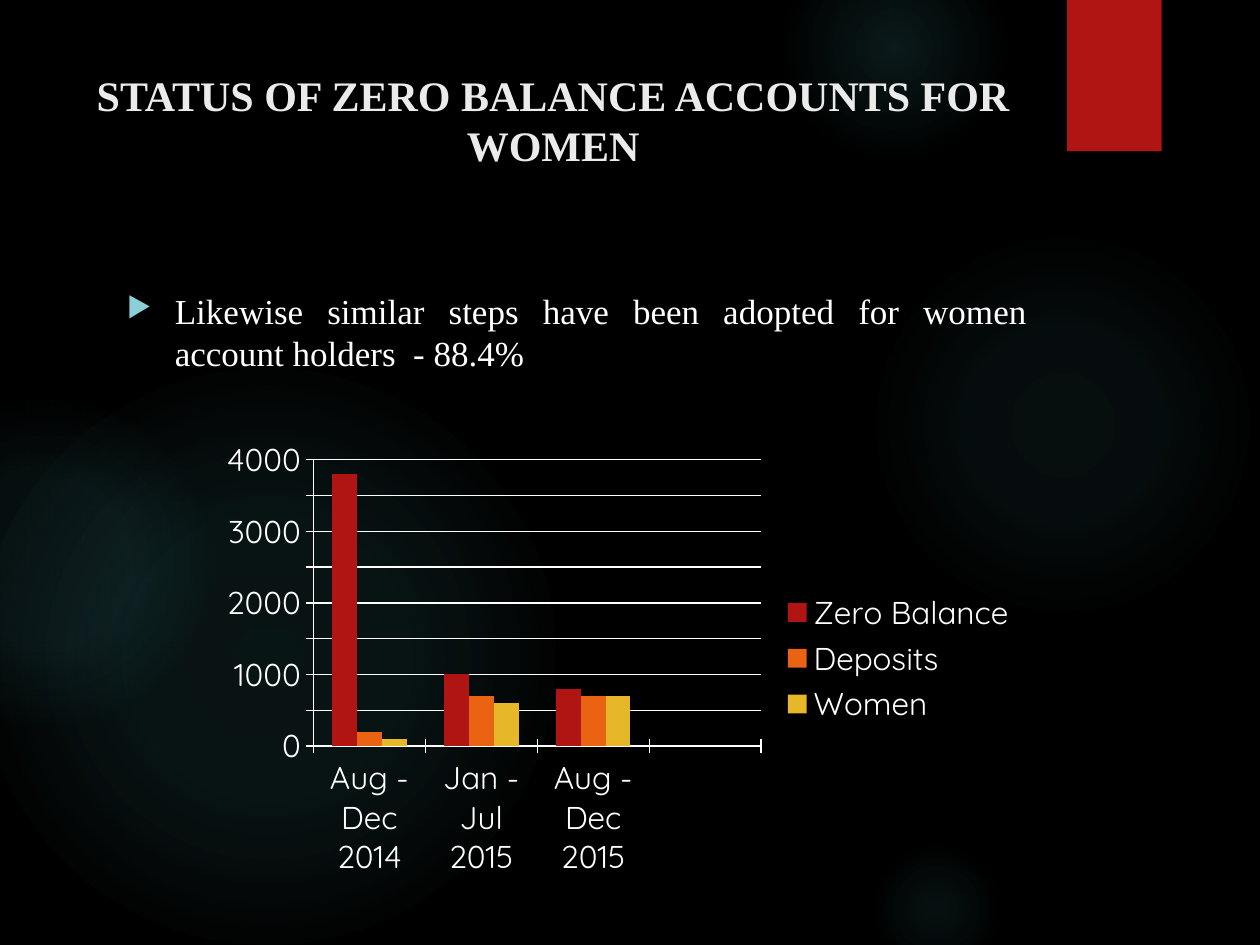
import pptx
import pptx.chart.data
import pptx.dml.color
import pptx.enum.chart
import pptx.enum.shapes
import pptx.enum.text
import pptx.oxml
import pptx.oxml.ns
import pptx.util
from pptx.util import Inches

RGBColor = pptx.dml.color.RGBColor
BLACK = RGBColor(0x00, 0x00, 0x00)
WHITE = RGBColor(0xFF, 0xFF, 0xFF)
TITLE_GREY = RGBColor(0xEB, 0xEB, 0xEB)
GLOW = RGBColor(0x50, 0xB9, 0xC1)
BULLET = RGBColor(0x8A, 0xD0, 0xD6)
RED = RGBColor(0xB0, 0x15, 0x13)
ORANGE = RGBColor(0xEA, 0x63, 0x12)
YELLOW = RGBColor(0xE6, 0xB7, 0x29)
SERIF, SANS = "Times New Roman", "Quicksand"

# left, top, diameter, gradient stops as (position %, opacity %)
GLOWS = [
    (6.89, 1.83, 3.08, [(0, 7), (36, 6), (69, 0)]),
    (6.22, -0.5, 1.75, [(0, 14), (36, 7), (73, 0)]),
    (6.89, 6.67, 1.08, [(0, 9), (36, 5), (66, 0)]),
    (-0.17, 2.92, 4.58, [(0, 11), (36, 10), (75, 0)]),
    (-0.92, 3.17, 2.58, [(0, 8), (36, 8), (72, 0)]),
]
PERIODS = ["Aug - Dec 2014", "Jan - Jul 2015", "Aug - Dec 2015", ""]
SERIES = [
    ("Zero Balance", [3800, 1000, 800, None], RED),
    ("Deposits", [200, 700, 700, None], ORANGE),
    ("Women ", [100, 600, 700, None], YELLOW),
]


def add_plain_shape(slide, kind, left, top, width, height, color):
    shape = slide.shapes.add_shape(kind, left, top, width, height)
    shape.shadow.inherit = False
    shape.line.fill.background()
    shape.fill.solid()
    shape.fill.fore_color.rgb = color
    return shape


def add_glow(slide, left, top, diameter, stops):
    shape = add_plain_shape(slide, pptx.enum.shapes.MSO_SHAPE.OVAL,
                            left, top, diameter, diameter, GLOW)
    stop_xml = "".join(
        f'<a:gs pos="{position * 1000}"><a:srgbClr val="{GLOW}">'
        f'<a:alpha val="{opacity * 1000}"/></a:srgbClr></a:gs>'
        for position, opacity in stops)
    gradient = pptx.oxml.parse_xml(
        f'<a:gradFill {pptx.oxml.ns.nsdecls("a")} rotWithShape="1">'
        f'<a:gsLst>{stop_xml}</a:gsLst><a:path path="circle">'
        '<a:fillToRect l="50000" t="50000" r="50000" b="50000"/>'
        '</a:path></a:gradFill>')
    properties = shape.element.spPr
    solid = properties.find(pptx.oxml.ns.qn("a:solidFill"))
    properties.replace(solid, gradient)


def add_backdrop(slide):
    slide.background.fill.solid()
    slide.background.fill.fore_color.rgb = BLACK
    for left, top, diameter, stops in GLOWS:
        add_glow(slide, Inches(left), Inches(top), Inches(diameter), stops)
    # Red tab at the top edge
    add_plain_shape(slide, pptx.enum.shapes.MSO_SHAPE.RECTANGLE,
                    Inches(8.47), 0, Inches(0.75), Inches(1.2), RED)


def style_text(shape, text, size, color, alignment, bold=False):
    frame = shape.text_frame
    frame.word_wrap = True
    frame.auto_size = pptx.enum.text.MSO_AUTO_SIZE.NONE
    frame.vertical_anchor = pptx.enum.text.MSO_ANCHOR.TOP
    frame.text = text
    paragraph = frame.paragraphs[0]
    paragraph.alignment = alignment
    font = paragraph.runs[0].font
    font.name, font.size, font.bold = SERIF, pptx.util.Pt(size), bold
    font.color.rgb = color
    return paragraph


def add_title(slide, left, top, width, height):
    title = slide.shapes.title
    title.left, title.top, title.width, title.height = left, top, width, height
    style_text(title, "STATUS OF ZERO BALANCE ACCOUNTS FOR WOMEN", 24,
               TITLE_GREY, pptx.enum.text.PP_ALIGN.CENTER, bold=True)
    # Keep the title above the backdrop
    slide.shapes.element.append(title.element)


def add_body(slide, left, top, width, height):
    box = slide.shapes.add_textbox(left, top, width, height)
    paragraph = style_text(
        box, "Likewise similar steps have been adopted for women account holders  - 88.4%",
        20, WHITE, pptx.enum.text.PP_ALIGN.JUSTIFY)
    paragraph.space_before = pptx.util.Pt(10)
    # Triangle bullet with a hanging indent
    properties = paragraph._p.get_or_add_pPr()
    indent = Inches(0.38)
    properties.set("marL", str(indent))
    properties.set("indent", str(-indent))
    namespace = pptx.oxml.ns.nsdecls("a")
    for bullet_xml in (
            f'<a:buClr {namespace}><a:srgbClr val="{BULLET}"/></a:buClr>',
            f'<a:buSzPct {namespace} val="80000"/>',
            f'<a:buChar {namespace} char="▶"/>'):
        properties.append(pptx.oxml.parse_xml(bullet_xml))


def style_line(line):
    line.color.rgb = WHITE
    line.width = pptx.util.Pt(0.75)


def add_accounts_chart(slide, left, top, width, height):
    data = pptx.chart.data.CategoryChartData()
    data.categories = PERIODS
    for name, values, _ in SERIES:
        data.add_series(name, values)
    chart = slide.shapes.add_chart(
        pptx.enum.chart.XL_CHART_TYPE.COLUMN_CLUSTERED,
        left, top, width, height, data).chart
    chart.has_title = False
    chart.font.name = SANS
    chart.font.size = pptx.util.Pt(18)
    chart.font.color.rgb = WHITE

    # Columns
    plot = chart.plots[0]
    plot.vary_by_categories = False
    plot.gap_width = 150
    plot.overlap = 0
    for series, (_, _, color) in zip(plot.series, SERIES):
        series.format.fill.solid()
        series.format.fill.fore_color.rgb = color

    # Axes and gridlines
    for axis in (chart.category_axis, chart.value_axis):
        axis.major_tick_mark = pptx.enum.chart.XL_TICK_MARK.CROSS
        style_line(axis.format.line)
    value_axis = chart.value_axis
    value_axis.minimum_scale, value_axis.maximum_scale = 0, 4000
    value_axis.major_unit = 500
    value_axis.has_major_gridlines = True
    style_line(value_axis.major_gridlines.format.line)

    # Legend
    chart.has_legend = True
    chart.legend.position = pptx.enum.chart.XL_LEGEND_POSITION.RIGHT
    chart.legend.include_in_layout = False


def main():
    presentation = pptx.Presentation()
    presentation.slide_width, presentation.slide_height = Inches(10), Inches(7.5)
    slide = presentation.slides.add_slide(presentation.slide_layouts[5])
    add_backdrop(slide)
    add_title(slide, Inches(0.53), Inches(0.5), Inches(7.72), Inches(1))
    add_body(slide, Inches(0.91), Inches(2.25), Inches(7.34), Inches(4.59))
    add_accounts_chart(slide, Inches(1.67), Inches(3.42), Inches(6.5), Inches(3.61))
    presentation.save("out.pptx")


if __name__ == "__main__":
    main()
